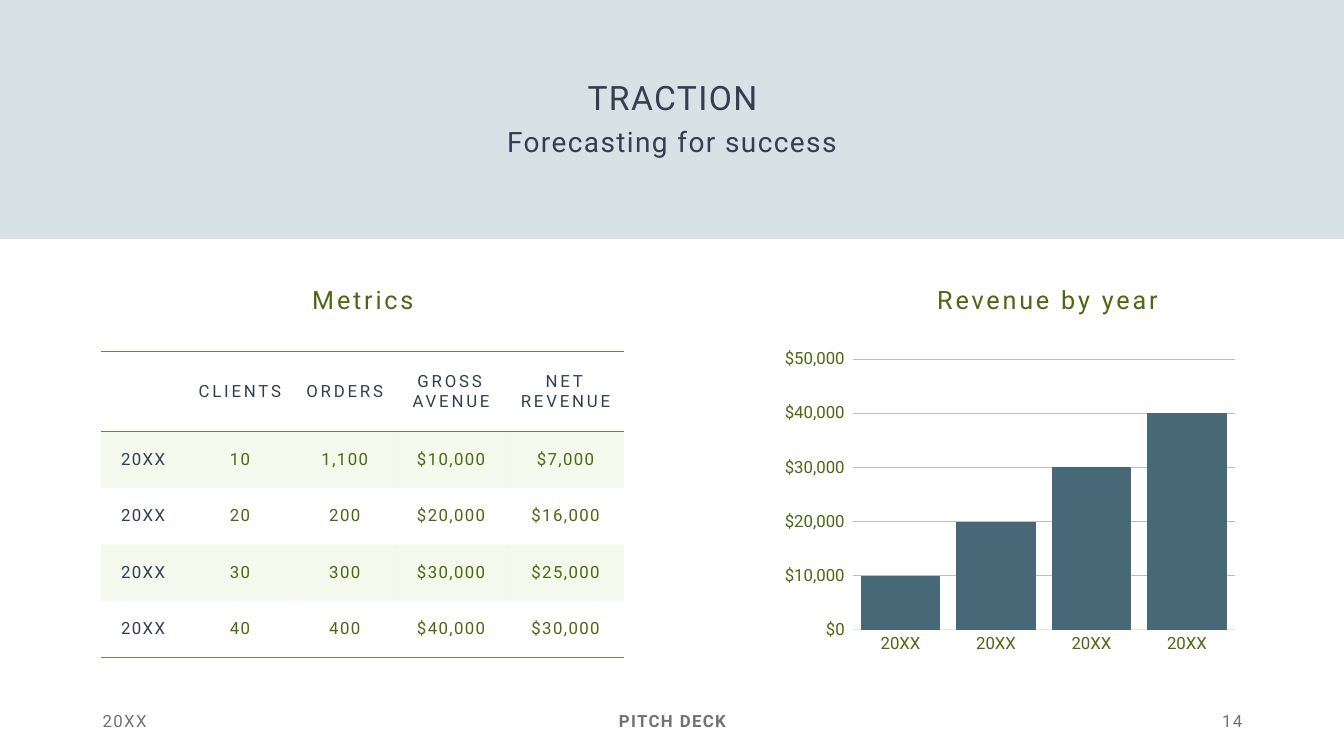
import pptx
import pptx.chart.data
import pptx.dml.color
import pptx.enum.chart
import pptx.enum.shapes
import pptx.enum.text
import pptx.oxml.ns
import pptx.oxml.xmlchemy
import pptx.util
import lxml.etree

Inches = pptx.util.Inches
Pt = pptx.util.Pt
qn = pptx.oxml.ns.qn
ALIGN = pptx.enum.text.PP_ALIGN
ANCHOR = pptx.enum.text.MSO_ANCHOR

FONT = "Roboto"
NAVY, OLIVE, GREY = "333F50", "4D6810", "767171"
RULE, BAND = "6B8043", "CFDCA5"


def color(hex_code):
    return pptx.dml.color.RGBColor.from_string(hex_code)


def write(frame, text, size, hex_code, spacing, align=ALIGN.CENTER, bold=False):
    """Fill a text frame with one styled paragraph and return it; spacing is in points."""
    para = frame.paragraphs[0]
    para.alignment = align
    para.font.name = FONT
    para.font.size = Pt(size)
    para.font.bold = bold
    para.font.color.rgb = color(hex_code)
    span = para.add_run()
    span.text = text
    span.font._element.set("spc", str(spacing * 100))
    return para


deck = pptx.Presentation()
deck.slide_width = Inches(13.33)
deck.slide_height = Inches(7.5)
slide = deck.slides.add_slide(deck.slide_layouts.get_by_name("Comparison"))
holders = {holder.placeholder_format.idx: holder for holder in slide.placeholders}

# Header band, behind the title
band = slide.shapes.add_shape(
    pptx.enum.shapes.MSO_SHAPE.RECTANGLE, 0, 0, deck.slide_width, Inches(2.37))
band.shadow.inherit = False
band.fill.solid()
band.fill.fore_color.rgb = color("D7E2E7")
band.line.fill.background()
holders[0].element.addprevious(band.element)

# Title, subtitle and the two section headings
headings = [
    (0, "TRACTION", (4.42, 0.66, 4.5, 0.66), 24, NAVY, 1, ANCHOR.MIDDLE),
    (2, "Forecasting for success", (4.77, 1.11, 3.79, 0.62), 20, NAVY, 1, ANCHOR.MIDDLE),
    (1, "Metrics", (1, 2.8, 5.2, 0.49), 18, OLIVE, 2, ANCHOR.TOP),
    (3, "Revenue by year", (8.46, 2.8, 3.86, 0.49), 18, OLIVE, 2, ANCHOR.TOP),
]
for index, text, place, size, hex_code, spacing, anchor in headings:
    holder = holders[index]
    holder.left, holder.top, holder.width, holder.height = map(Inches, place)
    frame = holder.text_frame
    frame.word_wrap = True
    frame.auto_size = pptx.enum.text.MSO_AUTO_SIZE.NONE
    frame.vertical_anchor = anchor
    para = write(frame, text, size, hex_code, spacing)
    para.line_spacing = 0.9
    para.space_before = Pt(10 if index else 0)
    properties = para._p.get_or_add_pPr()
    properties.set("marL", "0")
    properties.set("indent", "0")
    properties.insert_element_before(
        pptx.oxml.xmlchemy.OxmlElement("a:buNone"), "a:tabLst", "a:defRPr", "a:extLst")
holders[4].element.getparent().remove(holders[4].element)

# Metrics table
metrics = [
    ("", "CLIENTS", "ORDERS", "GROSS AVENUE", "NET REVENUE"),
    ("20XX", "10", "1,100", "$10,000", "$7,000"),
    ("20XX", "20", "200", "$20,000", "$16,000"),
    ("20XX", "30", "300", "$30,000", "$25,000"),
    ("20XX", "40", "400", "$40,000", "$30,000"),
]
table = slide.shapes.add_table(
    5, 5, Inches(1), Inches(3.49), Inches(5.2), Inches(3.03)).table
table.first_row = False
table.horz_banding = False
# The "No Style, No Grid" table style
table._tbl.tblPr.find(qn("a:tableStyleId")).text = "{2D5ABB26-0587-4C30-8999-92F81FD0307C}"
for column, width in zip(table.columns, (0.84, 1.08, 1, 1.11, 1.16)):
    column.width = Inches(width)
# Each border is put first, so the bottom one is inserted before the top one
edges = {0: ("a:lnB", "a:lnT"), 4: ("a:lnB",)}
for row_index, values in enumerate(metrics):
    is_header = row_index == 0
    table.rows[row_index].height = Inches(0.79 if is_header else 0.56)
    for column_index, value in enumerate(values):
        cell = table.cell(row_index, column_index)
        cell.vertical_anchor = ANCHOR.MIDDLE
        cell.margin_left = cell.margin_right = Inches(0.09)
        cell.margin_top = cell.margin_bottom = Inches(0.04)
        if value:
            hex_code = NAVY if is_header or column_index == 0 else OLIVE
            write(cell.text_frame, value, 12, hex_code, 2 if is_header else 1)
        cell_properties = cell._tc.get_or_add_tcPr()
        if row_index % 2:
            cell.fill.solid()
            cell.fill.fore_color.rgb = color(BAND)
            shade = cell_properties.find(".//" + qn("a:srgbClr"))
            lxml.etree.SubElement(shade, qn("a:alpha")).set("val", "20000")
        else:
            cell.fill.background()
        for edge in edges.get(row_index, ()):
            border = pptx.oxml.xmlchemy.OxmlElement(edge)
            border.set("w", str(Pt(1)))
            fill = lxml.etree.SubElement(border, qn("a:solidFill"))
            lxml.etree.SubElement(fill, qn("a:srgbClr")).set("val", RULE)
            cell_properties.insert(0, border)

# Revenue chart
revenue = pptx.chart.data.CategoryChartData()
revenue.categories = ["20XX"] * 4
revenue.add_series("Series 1", (10000, 20000, 30000, 40000))
chart = slide.shapes.add_chart(
    pptx.enum.chart.XL_CHART_TYPE.COLUMN_CLUSTERED,
    Inches(7.69), Inches(3.4), Inches(4.65), Inches(3.15), revenue).chart
chart.has_title = False
chart.has_legend = False
chart.font.name = FONT
chart.font.size = Pt(10)
plot = chart.plots[0]
plot.gap_width = 20
plot.overlap = -24
plot.vary_by_categories = False
columns = plot.series[0].format.fill
columns.solid()
columns.fore_color.rgb = color("476977")

for axis in (chart.category_axis, chart.value_axis):
    axis.major_tick_mark = axis.minor_tick_mark = pptx.enum.chart.XL_TICK_MARK.NONE
    axis.tick_labels.font.name = FONT
    axis.tick_labels.font.size = Pt(12)
    axis.tick_labels.font.color.rgb = color(OLIVE)
chart.category_axis.format.line.color.rgb = color("E0E5EB")
chart.category_axis.format.line.width = Pt(0.75)
dollars = chart.value_axis
dollars.minimum_scale = 0
dollars.maximum_scale = 50000
dollars.major_unit = 10000
dollars.format.line.fill.background()
dollars.major_gridlines.format.line.color.rgb = color("BFBFBF")
dollars.major_gridlines.format.line.width = Pt(0.75)
dollars.tick_labels.number_format = r'"$"#,##0_);[Red]\("$"#,##0\)'
dollars.tick_labels.number_format_is_linked = False

# Footer
footers = [
    ("20XX", 0.92, 3, ALIGN.LEFT, False),
    ("PITCH DECK", 4.42, 4.5, ALIGN.CENTER, True),
    ("14", 9.42, 3, ALIGN.RIGHT, False),
]
for text, left, width, align, bold in footers:
    box = slide.shapes.add_textbox(Inches(left), Inches(6.95), Inches(width), Inches(0.4))
    box.text_frame.word_wrap = True
    box.text_frame.vertical_anchor = ANCHOR.MIDDLE
    write(box.text_frame, text, 12, GREY, 1, align, bold)

deck.save("out.pptx")
